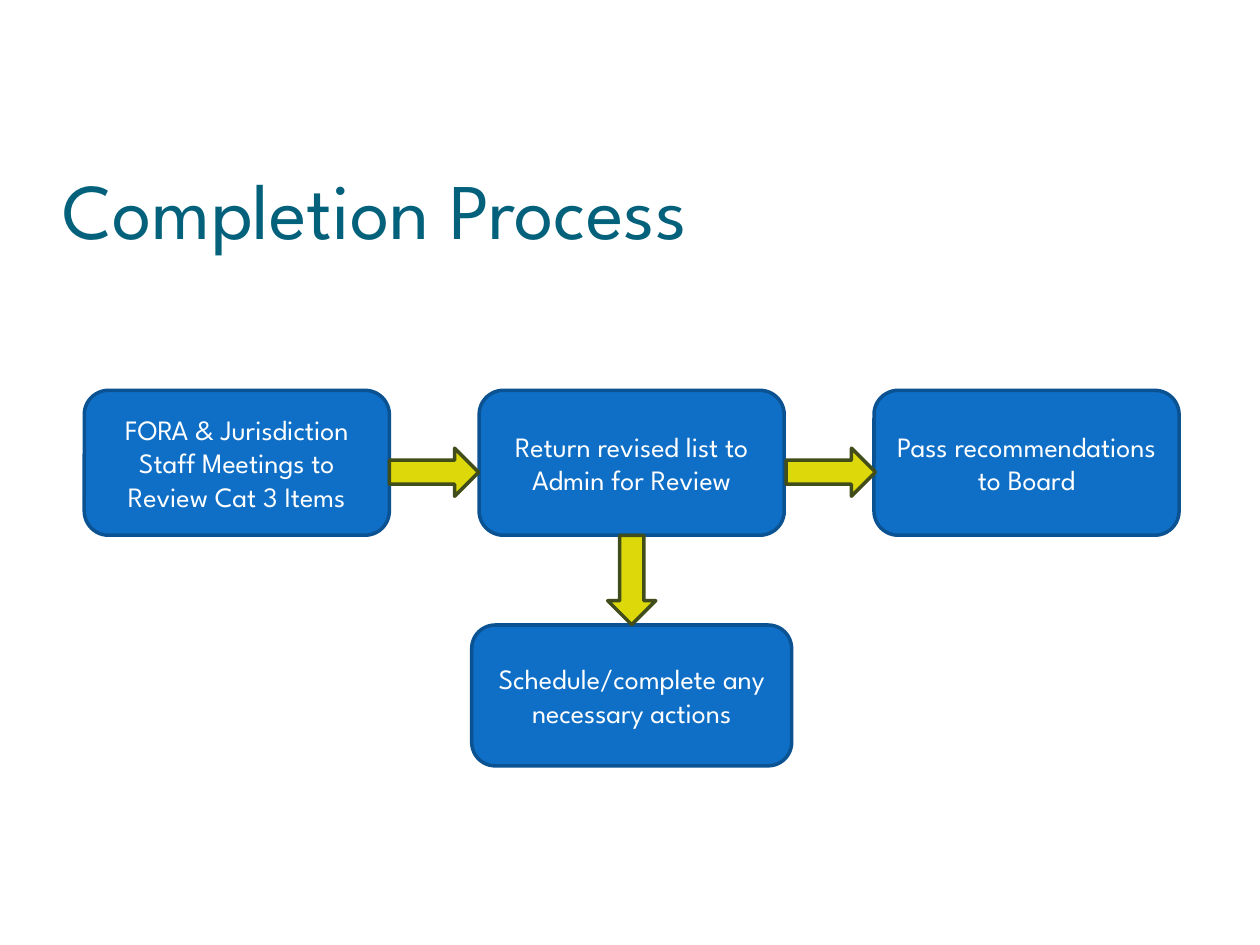
from pptx import Presentation
from pptx.dml.color import RGBColor
from pptx.enum import shapes, text
from pptx.util import Cm, Pt

FONT = "League Spartan"
STEPS = [
    "FORA & Jurisdiction Staff Meetings to Review Cat 3 Items",
    "Return revised list to Admin for Review",
    "Pass recommendations to Board",
]
FOLLOW_UP = "Schedule/complete any necessary actions"
STEP_W, STEP_H, PITCH = 6.15, 2.92, 7.96
FOLLOW_W, FOLLOW_H, FOLLOW_DROP = 6.45, 2.84, 4.73
ARROW_W, ARROW_H = 1.8, 0.97


def rgb(value):
    return RGBColor.from_string(value)


def write(tf, words, size, color, align, **frame):
    for name, value in {"word_wrap": True, **frame}.items():
        setattr(tf, name, value)
    p = tf.paragraphs[0]
    p.alignment = align
    r = p.add_run()
    r.text = words
    for name, value in {"name": FONT, "size": Pt(size)}.items():
        setattr(r.font, name, value)
    r.font.color.rgb = rgb(color)


def add_block(s, kind, box, fill, line):
    sp = s.shapes.add_shape(kind, *map(Cm, box))
    sp.shadow.inherit = False
    sp.fill.solid()
    sp.fill.fore_color.rgb = rgb(fill)
    sp.line.color.rgb = rgb(line)
    sp.line.width = Pt(2)
    return sp


def add_step(s, box, words):
    sp = add_block(s, shapes.MSO_SHAPE.ROUNDED_RECTANGLE, box, "0F6FC6", "0B5292")
    write(sp.text_frame, words, 16, "FFFFFF", text.PP_ALIGN.CENTER,
          vertical_anchor=text.MSO_ANCHOR.MIDDLE)


def add_arrow(s, cx, cy, rotation=0):
    """Place a block arrow by its centre."""
    box = (cx - ARROW_W / 2, cy - ARROW_H / 2, ARROW_W, ARROW_H)
    sp = add_block(s, shapes.MSO_SHAPE.RIGHT_ARROW, box, "DDD809", "414D1A")
    sp.rotation = rotation


def add_title(s, box, words):
    tf = s.shapes.add_textbox(*map(Cm, box)).text_frame
    write(tf, words, 45, "04617B", text.PP_ALIGN.LEFT,
          vertical_anchor=text.MSO_ANCHOR.BOTTOM, margin_left=0,
          margin_right=0, margin_top=Cm(0.13), margin_bottom=0)


def add_flow(s, left, top):
    """Draw a row of steps with a follow-up step below the middle one."""
    for i, words in enumerate(STEPS):
        add_step(s, (left + i * PITCH, top, STEP_W, STEP_H), words)
    middle = left + PITCH + STEP_W / 2
    add_step(s, (middle - FOLLOW_W / 2, top + FOLLOW_DROP, FOLLOW_W, FOLLOW_H),
             FOLLOW_UP)
    for i in range(len(STEPS) - 1):
        add_arrow(s, left + i * (PITCH + 0.04) + STEP_W + ARROW_W / 2, top + 1.65)
    add_arrow(s, middle, top + (STEP_H + FOLLOW_DROP) / 2, 90)


def main():
    prs = Presentation()
    prs.slide_width, prs.slide_height = Cm(25.4), Cm(19.05)
    s = prs.slides.add_slide(prs.slide_layouts[6])
    add_title(s, (1.27, 3.18, 22.86, 1.96), "Completion Process")
    add_flow(s, 1.7, 7.87)
    prs.save("out.pptx")


if __name__ == "__main__":
    main()
